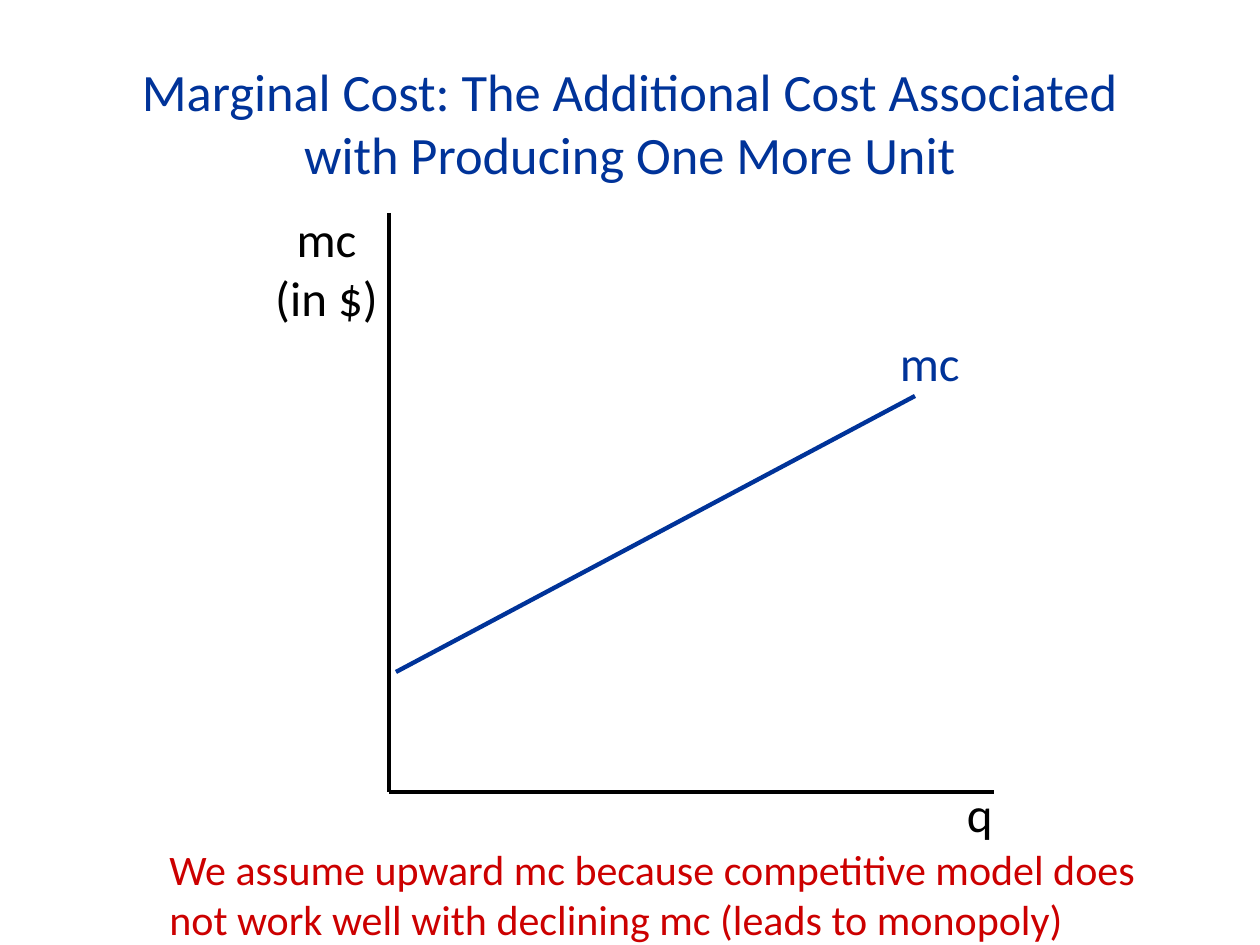
from lxml import etree
from pptx import Presentation
from pptx import util as u
from pptx.dml.color import RGBColor
from pptx.enum import shapes, text
from pptx.oxml.ns import qn

BLUE = RGBColor(0x00, 0x33, 0x99)
BLACK = RGBColor(0x00, 0x00, 0x00)
RED = RGBColor(0xCC, 0x00, 0x00)
LEFT, CENTER, RIGHT = text.PP_ALIGN.LEFT, text.PP_ALIGN.CENTER, text.PP_ALIGN.RIGHT
TOP, MIDDLE = text.MSO_ANCHOR.TOP, text.MSO_ANCHOR.MIDDLE

PX = u.Inches(1) / 126
WIDTH, HEIGHT = 1260, 945
ORIGIN = (389, 792)

# Lines: start, end, colour
LINES = [
    ((ORIGIN[0], 213), ORIGIN, BLACK),
    (ORIGIN, (994, ORIGIN[1]), BLACK),
    ((396, 672), (915, 396), BLUE),
]

# Texts: wording, (left, top, width, height), points, colour, alignment, anchor
TEXTS = [
    ("Marginal Cost: The Additional Cost Associated with Producing One More Unit",
     (88, 58, 1084, 129), 30, BLUE, CENTER, MIDDLE),
    ("q", (916, 777, 89, 72), 28, BLACK, RIGHT, TOP),
    ("mc (in $)", (257, 202, 139, 131), 28, BLACK, CENTER, TOP),
    ("mc", (726, 326, 246, 72), 28, BLUE, RIGHT, TOP),
    ("We assume upward mc because competitive model does not work well "
     "with declining mc (leads to monopoly)",
     (157, 837, 999, 115), 24, RED, LEFT, TOP),
]


def emu(*lengths):
    return [u.Emu(round(length * PX)) for length in lengths]


def add_line(page, start, end, color):
    line = page.shapes.add_connector(shapes.MSO_CONNECTOR.STRAIGHT, *emu(*start, *end))
    line.line.color.rgb = color
    line.line.width = u.Pt(2.5)
    etree.SubElement(line._element.spPr, qn("a:effectLst"))


def add_text(page, words, place, size, color, align, anchor):
    box = page.shapes.add_textbox(*emu(*place))
    frame = box.text_frame
    frame.word_wrap = True
    frame.vertical_anchor = anchor
    para = frame.paragraphs[0]
    para.alignment = align
    span = para.add_run()
    span.text = words
    span.font.color.rgb = color
    for name, value in {"name": "Calibri", "size": u.Pt(size)}.items():
        setattr(span.font, name, value)


def main():
    deck = Presentation()
    deck.slide_width, deck.slide_height = emu(WIDTH, HEIGHT)
    page = deck.slides.add_slide(deck.slide_layouts[6])
    # Axes and cost curve
    for line in LINES:
        add_line(page, *line)
    # Title, labels and remark
    for item in TEXTS:
        add_text(page, *item)
    deck.save("out.pptx")


if __name__ == "__main__":
    main()
